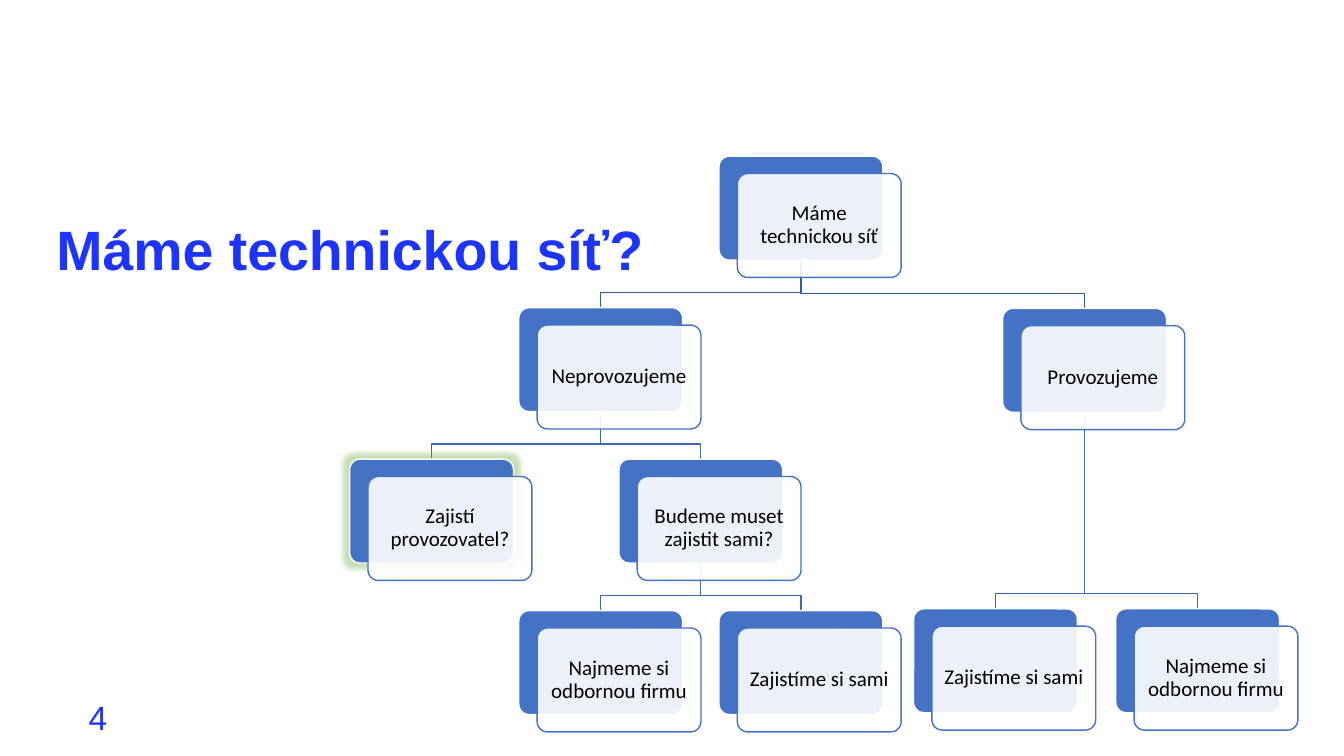
import pptx
import pptx.dml.color
import pptx.enum.shapes
import pptx.enum.text
import pptx.oxml
import pptx.oxml.ns
import pptx.util
from lxml import etree

Pt = pptx.util.Pt
RGBColor = pptx.dml.color.RGBColor
qn = pptx.oxml.ns.qn
PP_ALIGN = pptx.enum.text.PP_ALIGN
MIDDLE = pptx.enum.text.MSO_ANCHOR.MIDDLE
ROUNDED = pptx.enum.shapes.MSO_SHAPE.ROUNDED_RECTANGLE

INK_BLUE = RGBColor(0x1D, 0x34, 0xFD)
CARD_BLUE = RGBColor(0x44, 0x72, 0xC4)
ROOT_LINK = RGBColor(0x36, 0x5B, 0x9D)
BRANCH_LINK = RGBColor(0x3E, 0x67, 0xB2)
WHITE = RGBColor(0xFF, 0xFF, 0xFF)
BLACK = RGBColor(0, 0, 0)
GLOW_GREEN = RGBColor(0x70, 0xAD, 0x47)

CARD_W, CARD_H = 117, 74.2
SHIFT_X, SHIFT_Y = 13.1, 12.4
BUS_GAP = 10.8
TOP, LEVEL = 111.6, 108.2
RIGHT_TOP, RIGHT_LEAF_TOP = 220.3, 434.9

# key: (text, left, top)
STEPS = {
    "network": ("Máme technickou síť", 513.6, TOP),
    "not_run": ("Neprovozujeme", 370.6, TOP + LEVEL),
    "operator": ("Zajistí provozovatel?", 249.8, TOP + 2 * LEVEL),
    "ourselves": ("Budeme muset zajistit sami?", 442.1, TOP + 2 * LEVEL),
    "not_run_hire": ("Najmeme si odbornou firmu", 370.6, TOP + 3 * LEVEL),
    "not_run_self": ("Zajistíme si sami", 513.6, TOP + 3 * LEVEL),
    "run": ("Provozujeme", 716.2, RIGHT_TOP),
    "run_self": ("Zajistíme si sami", 652.6, RIGHT_LEAF_TOP),
    "run_hire": ("Najmeme si odbornou firmu", 797, RIGHT_LEAF_TOP),
}
BRANCHES = {
    "run": ("run_hire", "run_self"),
    "network": ("run", "not_run"),
    "ourselves": ("not_run_self", "not_run_hire"),
    "not_run": ("ourselves", "operator"),
}


def add_title(slide, text):
    title = slide.shapes.title
    title.left, title.top, title.width, title.height = Pt(33.1), Pt(154.1), Pt(861), Pt(52.6)
    frame = title.text_frame
    frame.text = text
    frame.vertical_anchor = MIDDLE
    frame.auto_size = pptx.enum.text.MSO_AUTO_SIZE.NONE
    heading = frame.paragraphs[0]
    heading.alignment = PP_ALIGN.LEFT
    heading.line_spacing = 0.9
    heading.font.name, heading.font.size, heading.font.bold = "Arial", Pt(39.6), True
    heading.font.color.rgb = INK_BLUE


def add_page_number(slide, number):
    frame = slide.shapes.add_textbox(Pt(56.2), Pt(497.5), Pt(216), Pt(28.8)).text_frame
    frame.word_wrap = True
    frame.vertical_anchor = MIDDLE
    page = frame.paragraphs[0]
    page.text = number
    page.font.name, page.font.size = "Arial", Pt(24)
    page.font.color.rgb = INK_BLUE


def add_link(slide, parent, child, color):
    _, parent_left, parent_top = STEPS[parent]
    _, child_left, child_top = STEPS[child]
    start_x, end_x = parent_left + CARD_W / 2, child_left + CARD_W / 2
    bus = child_top - BUS_GAP
    outline = slide.shapes.build_freeform(Pt(start_x), Pt(parent_top + CARD_H))
    bends = [(start_x, bus), (end_x, bus), (end_x, child_top)]
    outline.add_line_segments([(Pt(x), Pt(y)) for x, y in bends], close=False)
    link = outline.convert_to_shape()
    link.shadow.inherit = False
    link.fill.background()
    link.line.color.rgb = color
    link.line.width = Pt(1)


def add_card(slide, left, top, fill, line):
    card = slide.shapes.add_shape(ROUNDED, Pt(left), Pt(top), Pt(CARD_W), Pt(CARD_H))
    card.adjustments[0] = 0.1
    card.shadow.inherit = False
    card.fill.solid()
    card.fill.fore_color.rgb = fill
    card.line.color.rgb = line
    card.line.width = Pt(1)
    return card


def add_alpha(color_element, percent):
    etree.SubElement(color_element, qn("a:alpha"), val=str(percent * 1000))


def add_glow(card):
    effects = card._element.spPr.find(qn("a:effectLst"))
    glow = etree.SubElement(effects, qn("a:glow"), rad=str(Pt(8)))
    color = etree.SubElement(glow, qn("a:srgbClr"), val=str(GLOW_GREEN))
    add_alpha(color, 40)


def add_step(slide, text, left, top):
    back = add_card(slide, left, top, CARD_BLUE, WHITE)
    front = add_card(slide, left + SHIFT_X, top + SHIFT_Y, WHITE, CARD_BLUE)
    add_alpha(front._element.spPr.find(qn("a:solidFill"))[0], 90)
    frame = front.text_frame
    frame.word_wrap = True
    frame.vertical_anchor = MIDDLE
    frame.margin_left = frame.margin_right = Pt(4.3)
    frame.margin_top = frame.margin_bottom = Pt(4.3)
    label = frame.paragraphs[0]
    label.text = text
    label.alignment = PP_ALIGN.CENTER
    label.line_spacing = 0.9
    label.font.name, label.font.size = "Calibri", Pt(15)
    label.font.color.rgb = BLACK
    return back


def main():
    deck = pptx.Presentation()
    deck.slide_width, deck.slide_height = Pt(960), Pt(540)
    slide = deck.slides.add_slide(deck.slide_layouts[5])
    add_title(slide, "Máme technickou síť?")
    add_page_number(slide, "4")

    # Links lie behind the cards
    for parent, children in BRANCHES.items():
        for child in children:
            add_link(slide, parent, child, ROOT_LINK if parent == "network" else BRANCH_LINK)

    # Decision tree, with the operator's step highlighted
    for key, step in STEPS.items():
        back = add_step(slide, *step)
        if key == "operator":
            add_glow(back)

    deck.save("out.pptx")


if __name__ == "__main__":
    main()
